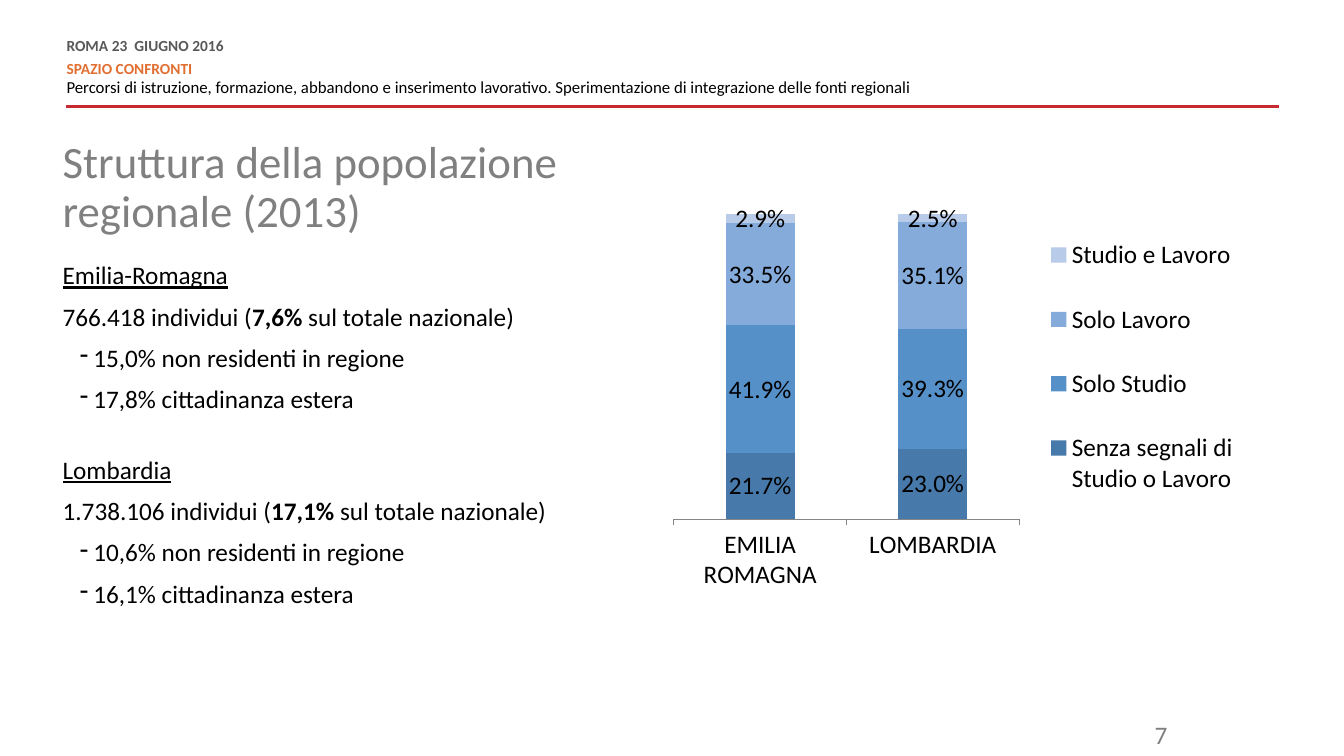
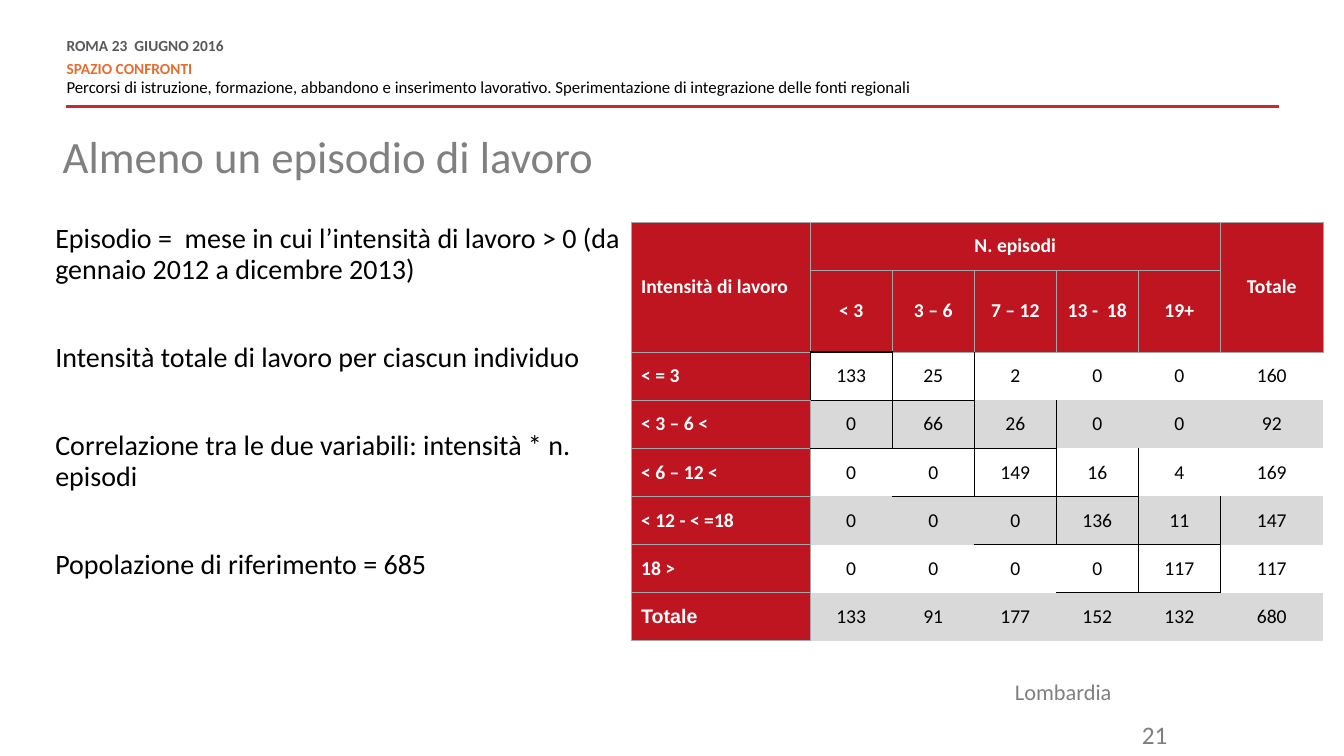
from lxml.etree import SubElement
from pptx import Presentation
from pptx.chart.data import CategoryChartData
from pptx.dml.color import RGBColor
from pptx.enum.chart import XL_CHART_TYPE, XL_LEGEND_POSITION, XL_TICK_LABEL_POSITION, XL_TICK_MARK
from pptx.enum.shapes import MSO_CONNECTOR
from pptx.enum.text import MSO_ANCHOR, PP_ALIGN
from pptx.oxml import parse_xml
from pptx.oxml.ns import nsdecls, qn
from pptx.util import Pt

COLORS = {
    "black": "000000", "white": "FFFFFF", "date": "595959", "section": "E26F31",
    "rule": "C72A31", "title": "808080", "number": "7F7F7F", "axis": "868686",
    "header": "BE1520", "band": "D9D9D9", "grid": "A6A6A6",
    "no signs": "4779AA", "study": "5590C8", "work": "84ABDA", "both": "B8CBE8",
}
FONT = "Calibri"
NO_STYLE = "{2D5ABB26-0587-4C30-8999-92F81FD0307C}"
OPPOSITE = {"L": "R", "R": "L", "T": "B", "B": "T"}
NEIGHBOUR = {"L": (0, -1), "R": (0, 1), "T": (-1, 0), "B": (1, 0)}


def rgb(name):
    return RGBColor.from_string(COLORS[name])


def style_font(font, size, color="black", bold=False, name=FONT):
    font.size = Pt(size)
    font.name = name
    font.bold = bold
    font.color.rgb = rgb(color)


def add_span(para, text, size, color="black", bold=False, underline=False, name=FONT):
    span = para.add_run()
    span.text = text
    style_font(span.font, size, color, bold, name)
    if underline:
        span.font.underline = True


def add_box(page, left, top, width, height, inset=True):
    box = page.shapes.add_textbox(Pt(left), Pt(top), Pt(width), Pt(height))
    frame = box.text_frame
    frame.word_wrap = True
    if not inset:
        frame.margin_left = frame.margin_right = frame.margin_top = frame.margin_bottom = 0
    return frame


def next_para(frame, before=0, spacing=0.9):
    """Use the empty first paragraph of a frame, or append one with space before it."""
    if not frame.paragraphs[0].runs:
        para = frame.paragraphs[0]
    else:
        para = frame.add_paragraph()
        para.space_before = Pt(before)
    para.line_spacing = spacing
    return para


def set_dash(para):
    props = para._p.get_or_add_pPr()
    props.set("marL", str(Pt(22)))
    props.set("indent", str(-Pt(9.75)))
    SubElement(props, qn("a:buChar")).set("char", "-")


def add_header(page):
    rule = page.shapes.add_connector(MSO_CONNECTOR.STRAIGHT, Pt(913.5), Pt(76.3), Pt(47.5), Pt(76.3))
    rule.line.color.rgb = rgb("rule")
    rule.line.width = Pt(2)
    SubElement(rule._element.spPr, qn("a:effectLst"))
    frame = add_box(page, 47.5, 28, 610.5, 42.5, inset=False)
    lines = [
        ("ROMA 23  GIUGNO 2016", 11, "date", True, 0, 6),
        ("SPAZIO CONFRONTI", 11, "section", True, 0, 0),
        ("Percorsi di istruzione, formazione, abbandono e inserimento lavorativo. "
         "Sperimentazione di integrazione delle fonti regionali", 12, "black", False, 3, 6),
    ]
    for text, size, color, bold, before, after in lines:
        para = next_para(frame, before, Pt(10.8))
        para.space_after = Pt(after)
        add_span(para, text, size, color, bold)


def add_label(page, text, left, top, width, height, size):
    frame = add_box(page, left, top, width, height, inset=False)
    add_span(next_para(frame), text, size, "title")


def add_page(deck, title, title_top, title_width, number):
    page = deck.slides.add_slide(deck.slide_layouts[6])
    add_header(page)
    add_label(page, title, 44.75, title_top, title_width, 58, 32)
    para = next_para(add_box(page, 756, 510.5, 85, 25), spacing=1)
    para.alignment = PP_ALIGN.RIGHT
    add_span(para, number, 18, "number")
    return page


def add_region(frame, name, people, share, details):
    add_span(next_para(frame, 31), name, 18, underline=True)
    para = next_para(frame, 10)
    add_span(para, f"{people} individui (", 18)
    add_span(para, share, 18, bold=True)
    add_span(para, " sul totale nazionale)", 18)
    for detail in details:
        para = next_para(frame, 10)
        set_dash(para)
        add_span(para, detail, 18)


def set_layout(element, x, y, width, height, inner=False):
    """Place a plot area or legend by fractions of the chart."""
    for old in element.findall(qn("c:layout")):
        element.remove(old)
    target = '<c:layoutTarget val="inner"/>' if inner else ""
    layout = parse_xml(
        f'<c:layout {nsdecls("c")}><c:manualLayout>{target}'
        '<c:xMode val="edge"/><c:yMode val="edge"/>'
        f'<c:x val="{x}"/><c:y val="{y}"/><c:w val="{width}"/><c:h val="{height}"/>'
        '</c:manualLayout></c:layout>')
    element.insert(0 if inner else 1, layout)


def add_population_chart(page):
    series = [
        ("Senza segnali di Studio o Lavoro", (0.217, 0.23), "no signs"),
        ("Solo Studio", (0.419, 0.393), "study"),
        ("Solo Lavoro", (0.335, 0.351), "work"),
        ("Studio e Lavoro", (0.029, 0.025), "both"),
    ]
    data = CategoryChartData(number_format="0.0%")
    data.categories = ["EMILIA ROMAGNA", "LOMBARDIA"]
    for name, values, _ in series:
        data.add_series(name, values)
    chart = page.shapes.add_chart(XL_CHART_TYPE.COLUMN_STACKED_100, Pt(481), Pt(141),
                                  Pt(418.25), Pt(302.5), data).chart
    style_font(chart.font, 18)
    chart.has_title = False
    chart.has_legend = True
    chart.legend.position = XL_LEGEND_POSITION.RIGHT
    chart.legend.include_in_layout = False
    chart.value_axis.has_major_gridlines = False
    chart.value_axis.visible = False
    axis = chart.category_axis
    axis.major_tick_mark = XL_TICK_MARK.OUTSIDE
    axis.tick_label_position = XL_TICK_LABEL_POSITION.LOW
    axis.format.line.color.rgb = rgb("axis")
    plot = chart.plots[0]
    plot.gap_width = 150
    plot.overlap = 100
    plot.vary_by_categories = False
    plot.has_data_labels = True
    plot.data_labels.show_value = True
    plot.data_labels.number_format = "0.0%"
    plot.data_labels.number_format_is_linked = False
    for column, (_, _, color) in zip(plot.series, series):
        column.format.fill.solid()
        column.format.fill.fore_color.rgb = rgb(color)
    set_layout(chart._chartSpace.chart.plotArea, 0, 0.04, 0.59, 0.72, inner=True)
    set_layout(chart.legend._element, 0.62, 0.02, 0.36, 0.76)


def fill_cell(cell, text, fill=None, color="black", bold=False, center=True, name=FONT):
    cell.vertical_anchor = MSO_ANCHOR.MIDDLE
    if fill:
        cell.fill.solid()
        cell.fill.fore_color.rgb = rgb(fill)
    else:
        cell.fill.background()
    para = cell.text_frame.paragraphs[0]
    para.alignment = PP_ALIGN.CENTER if center else PP_ALIGN.LEFT
    add_span(para, text, 14, color, bold, name=name)


def draw_edges(cell, edges):
    """Draw the borders of a cell from a dict of side: (color, width)."""
    props = cell._tc.get_or_add_tcPr()
    sides = [side for side in "LRTB" if side in edges]
    for position, side in enumerate(sides):
        color, width = edges[side]
        props.insert(position, parse_xml(
            f'<a:ln{side} {nsdecls("a")} w="{Pt(width)}"><a:solidFill>'
            f'<a:srgbClr val="{COLORS[color]}"/></a:solidFill></a:ln{side}>'))


def add_episode_table(page):
    headings = ["< 3", "3 – 6", "7 – 12", "13 -  18", "19+"]
    body = [
        ("< = 3", 133, 25, 2, 0, 0, 160),
        ("< 3 – 6 <", 0, 66, 26, 0, 0, 92),
        ("< 6 – 12 <", 0, 0, 149, 16, 4, 169),
        ("< 12 - < =18", 0, 0, 0, 136, 11, 147),
        ("18 >", 0, 0, 0, 0, 117, 117),
        ("Totale", 133, 91, 177, 152, 132, 680),
    ]
    widths = [128] + [58.6] * 5 + [73.5]
    heights = [34.4, 58.5] + [34.4] * len(body)
    table = page.shapes.add_table(len(heights), len(widths), Pt(450.75), Pt(158.6),
                                  Pt(sum(widths)), Pt(sum(heights))).table
    table.first_row = table.horz_banding = False
    table._tbl.tblPr.find(qn("a:tableStyleId")).text = NO_STYLE
    for column, width in zip(table.columns, widths):
        column.width = Pt(width)
    for row, height in zip(table.rows, heights):
        row.height = Pt(height)
    for first, last in [((0, 0), (1, 0)), ((0, 1), (0, 5)), ((0, 6), (1, 6))]:
        table.cell(*first).merge(table.cell(*last))

    white_bold = {"fill": "header", "color": "white", "bold": True}
    fill_cell(table.cell(0, 0), "Intensità di lavoro", center=False, **white_bold)
    fill_cell(table.cell(0, 1), "N. episodi", **white_bold)
    fill_cell(table.cell(0, 6), "Totale", **white_bold)
    for col, heading in enumerate(headings, 1):
        fill_cell(table.cell(1, col), heading, **white_bold)
    for row, (label, *counts) in enumerate(body, 2):
        label_font = "Arial" if label == "Totale" else FONT
        fill_cell(table.cell(row, 0), label, center=False, name=label_font, **white_bold)
        for col, count in enumerate(counts, 1):
            fill_cell(table.cell(row, col), str(count), "band" if row % 2 else None)

    cells = [(row, col) for row in range(len(heights)) for col in range(len(widths))]
    edges = {place: {} for place in cells}
    for row, col in cells:
        if (row < 2 or col == 0) and not table.cell(row, col).is_spanned:
            edges[row, col] = {side: ("grid", 0.75) for side in "LRTB"}
    for col in range(1, len(headings) + 1):
        row = col + 1
        for side, (down, across) in NEIGHBOUR.items():
            edges[row, col][side] = ("black", 1)
            edges[row + down, col + across][OPPOSITE[side]] = ("black", 1)
    for place in cells:
        draw_edges(table.cell(*place), edges[place])


def add_population_page(deck):
    page = add_page(deck, "Struttura della popolazione regionale (2013)", 100, 403, "7")
    frame = add_box(page, 44.75, 188, 354, 275, inset=False)
    add_region(frame, "Emilia-Romagna", "766.418", "7,6%",
               ["15,0% non residenti in regione", "17,8% cittadinanza estera"])
    add_region(frame, "Lombardia", "1.738.106", "17,1%",
               ["10,6% non residenti in regione", "16,1% cittadinanza estera"])
    add_population_chart(page)


def add_episode_page(deck):
    page = add_page(deck, "Almeno un episodio di lavoro", 96, 842, "21")
    frame = add_box(page, 39.5, 160.5, 411, 276, inset=False)
    for text in [
        "Episodio =  mese in cui l’intensità di lavoro > 0 (da gennaio 2012 a dicembre 2013)",
        "Intensità totale di lavoro per ciascun individuo",
        "Correlazione tra le due variabili: intensità * n. episodi",
        "Popolazione di riferimento = 685",
    ]:
        add_span(next_para(frame, 41.5), text, 20)
    add_episode_table(page)
    add_label(page, "Lombardia", 725, 486.75, 93, 18, 16)


def main():
    deck = Presentation()
    deck.slide_width, deck.slide_height = Pt(960), Pt(540)
    add_population_page(deck)
    add_episode_page(deck)
    deck.save("out.pptx")


if __name__ == "__main__":
    main()
